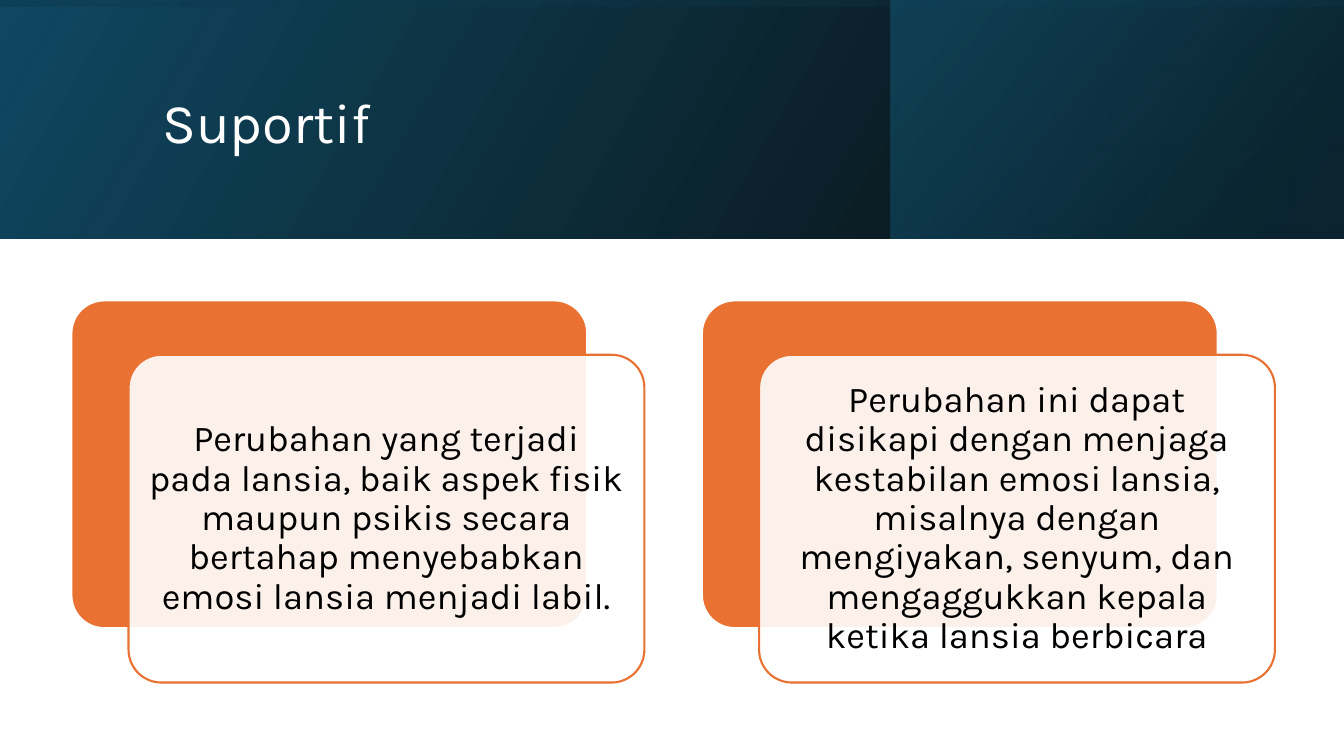
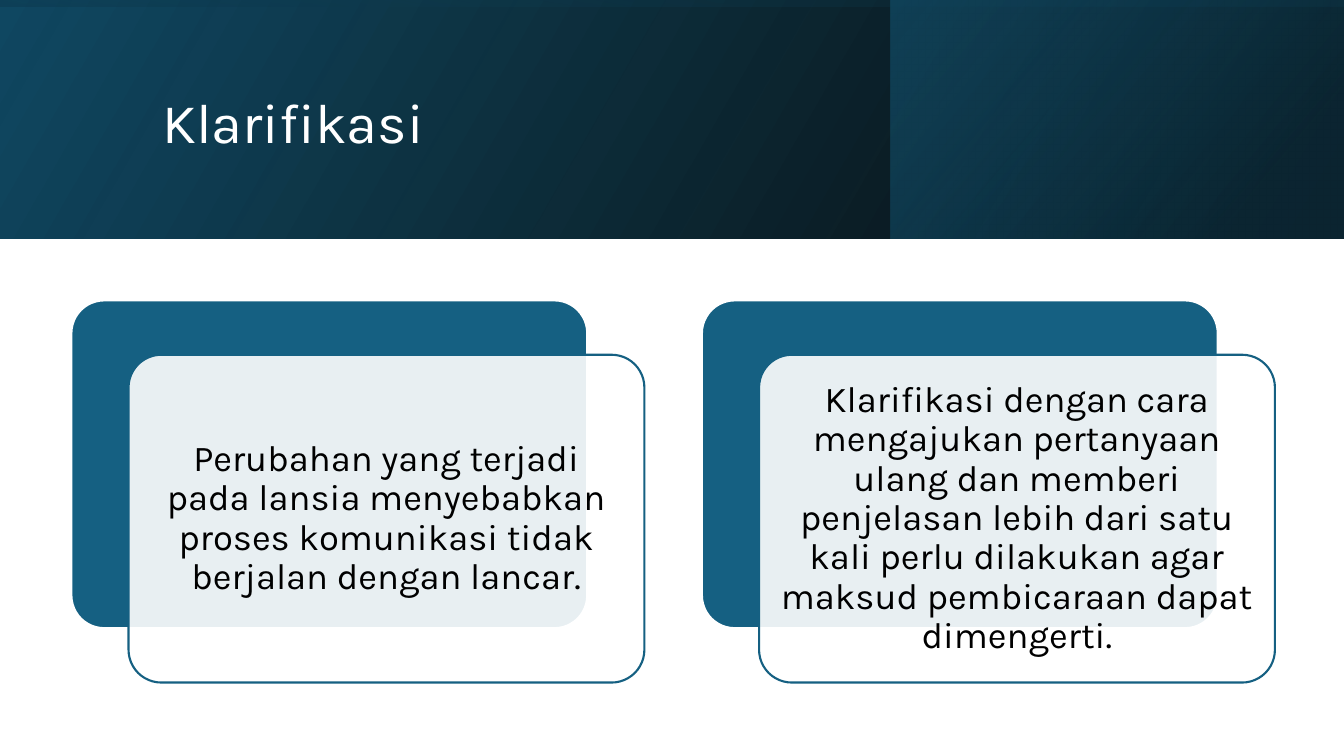
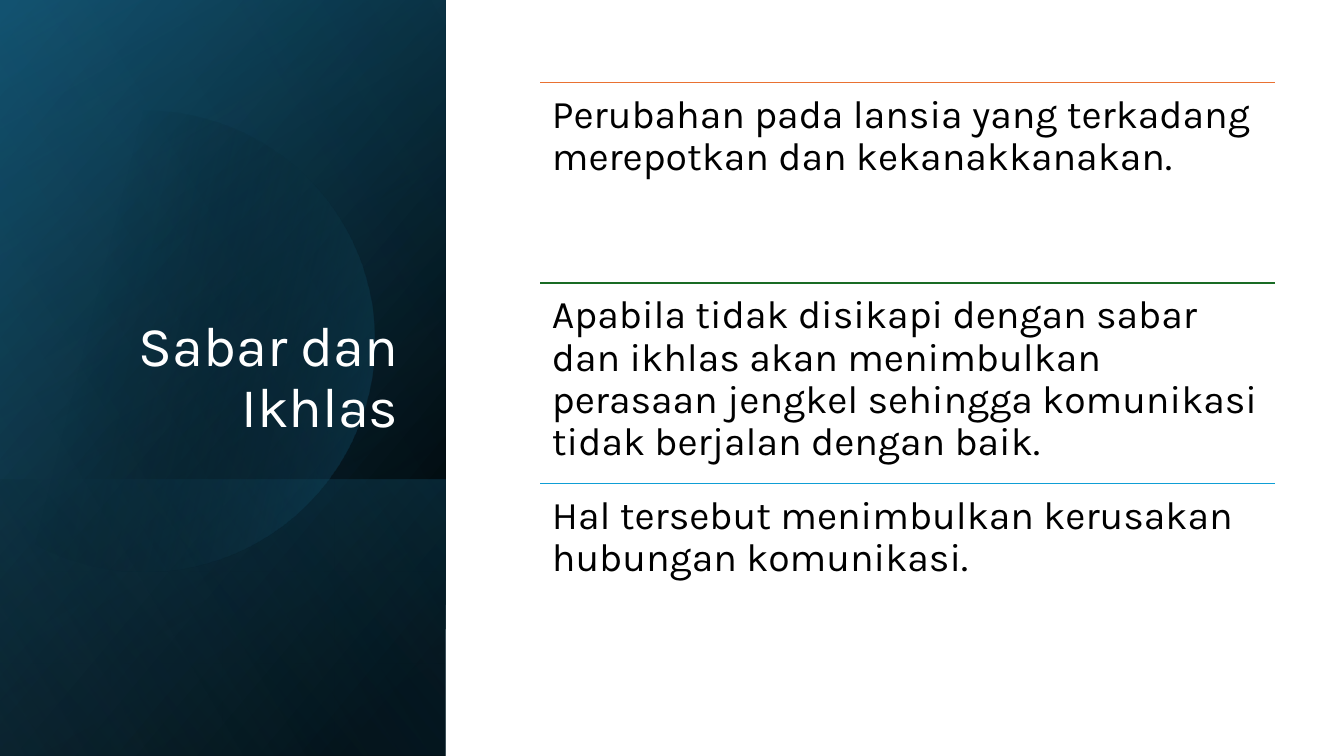
from dataclasses import dataclass
from math import acos, cos, sin

from lxml.etree import SubElement
from pptx import Presentation
from pptx.dml.color import RGBColor
from pptx.enum.shapes import MSO_CONNECTOR, MSO_SHAPE
from pptx.enum.text import MSO_ANCHOR, MSO_AUTO_SIZE, PP_ALIGN
from pptx.oxml.ns import qn
from pptx.util import Cm, Pt


@dataclass(frozen=True)
class Theme:
    font: str = "Karla"
    title_size: int = 40
    card_size: int = 26
    list_size: int = 28
    line_spacing: float = 0.9
    white: str = "FFFFFF"
    black: str = "000000"
    navy: str = "104862"
    deep_blue: str = "0B3041"
    blue: str = "156082"
    sky: str = "46B1E1"
    cyan: str = "0F9ED5"
    orange: str = "E97132"
    green: str = "196B24"


THEME = Theme()
SLIDE_WIDTH, SLIDE_HEIGHT = 33.87, 19.05
BAND_HEIGHT, PANEL_WIDTH = 6.02, 11.23
TITLE_ONLY = 5


# Fills and text
def set_opacity(shape, *percents):
    colors = shape.element.spPr.iter(qn("a:srgbClr"))
    for color, percent in zip(colors, percents):
        SubElement(color, qn("a:alpha")).set("val", str(percent * 1000))


def fill_gradient(shape, stops, angle):
    """Stops are (position, colour, opacity); the angle runs clockwise."""
    shape.shadow.inherit = False
    shape.line.fill.background()
    shape.fill.gradient()
    shape.fill.gradient_angle = 360 - angle
    for stop, (position, color, _) in zip(shape.fill.gradient_stops, stops):
        stop.position = position / 100
        stop.color.rgb = RGBColor.from_string(color)
    set_opacity(shape, *(opacity for _, _, opacity in stops))


def write(frame, text, size, color, align=PP_ALIGN.LEFT,
          anchor=MSO_ANCHOR.TOP, inset=0.25):
    frame.word_wrap = True
    frame.auto_size = MSO_AUTO_SIZE.NONE
    frame.vertical_anchor = anchor
    frame.margin_left = frame.margin_right = Cm(inset)
    frame.margin_top = frame.margin_bottom = Cm(min(inset, 0.3))
    para = frame.paragraphs[0]
    para.alignment = align
    para.line_spacing = THEME.line_spacing
    span = para.add_run()
    span.text = text
    span.font.name = THEME.font
    span.font.size = Pt(size)
    span.font.color.rgb = RGBColor.from_string(color)


# Backgrounds
def add_band(page, left, top, width, height, stops, angle, rotation=0):
    """Place a mirrored gradient by the area it covers after a quarter turn."""
    if rotation:
        left += (width - height) / 2
        top += (height - width) / 2
        width, height = height, width
    band = page.shapes.add_shape(
        MSO_SHAPE.RECTANGLE, Cm(left), Cm(top), Cm(width), Cm(height))
    band.rotation = rotation
    band.element.spPr.find(qn("a:xfrm")).set("flipH", "1")
    fill_gradient(band, stops, angle)


def add_header(page):
    right = 22.45
    add_band(page, 0, 0, SLIDE_WIDTH, BAND_HEIGHT,
             [(0, THEME.black, 96), (100, THEME.navy, 100)], 330)
    add_band(page, right, 0, SLIDE_WIDTH - right, BAND_HEIGHT,
             [(19, THEME.deep_blue, 68), (100, THEME.blue, 48)], 320)
    add_band(page, 0, 0, SLIDE_WIDTH, BAND_HEIGHT,
             [(23, THEME.navy, 16), (99, THEME.black, 45)], 350, 270)


def add_disc(page, center_x, center_y, radius):
    """Draw the part of a disc that lies right of the slide edge."""
    limit, steps = acos(-center_x / radius), 120
    angles = [limit * (2 * step / steps - 1) for step in range(steps + 1)]
    points = [(Cm(center_x + radius * cos(angle)),
               Cm(center_y + radius * sin(angle))) for angle in angles]
    outline = page.shapes.build_freeform(*points[0])
    outline.add_line_segments(points[1:], close=True)
    fill_gradient(outline.convert_to_shape(),
                  [(29, THEME.black, 0), (100, THEME.blue, 43)], 14)


def add_side_panel(page):
    foot = 12.09
    full = (0, 0, PANEL_WIDTH, SLIDE_HEIGHT)
    add_band(page, *full, [(8, THEME.black, 100), (100, THEME.navy, 100)], 50, 90)
    add_band(page, *full, [(0, THEME.black, 0), (99, THEME.blue, 46)], 30, 90)
    add_band(page, 0, foot, PANEL_WIDTH, SLIDE_HEIGHT - foot,
             [(2, THEME.blue, 29), (100, THEME.black, 30)], 130, 90)
    add_disc(page, 3.64, 8.6, 5.8)
    add_band(page, *full, [(0, THEME.black, 0), (99, THEME.sky, 11)], 120, 90)


# Content
def add_title(page, text, left, top, width, height, align, anchor):
    title = page.shapes.title
    page.shapes.element.append(title.element)  # in front of the background
    title.left, title.top = Cm(left), Cm(top)
    title.width, title.height = Cm(width), Cm(height)
    write(title.text_frame, text, THEME.title_size, THEME.white, align, anchor)


def add_card_layer(page, left, top, fill, line):
    card = page.shapes.add_shape(
        MSO_SHAPE.ROUNDED_RECTANGLE, Cm(left), Cm(top), Cm(13), Cm(8.26))
    card.adjustments[0] = 0.1
    card.shadow.inherit = False
    card.fill.solid()
    card.fill.fore_color.rgb = RGBColor.from_string(fill)
    card.line.color.rgb = RGBColor.from_string(line)
    card.line.width = Pt(1.5)
    return card


def add_card(page, left, top, text, accent):
    add_card_layer(page, left, top, accent, THEME.white)
    front = add_card_layer(page, left + 1.44, top + 1.37, THEME.white, accent)
    set_opacity(front, 90)
    write(front.text_frame, text, THEME.card_size, THEME.black,
          PP_ALIGN.CENTER, MSO_ANCHOR.MIDDLE, 0.28)


def add_ruled_text(page, left, top, width, height, text, accent):
    rule = page.shapes.add_connector(
        MSO_CONNECTOR.STRAIGHT, Cm(left), Cm(top), Cm(left + width), Cm(top))
    rule.line.color.rgb = RGBColor.from_string(accent)
    rule.line.width = Pt(1)
    SubElement(rule.element.spPr, qn("a:effectLst"))
    box = page.shapes.add_textbox(Cm(left), Cm(top), Cm(width), Cm(height))
    write(box.text_frame, text, THEME.list_size, THEME.black, inset=0.3)


# Slides
def add_page(deck):
    return deck.slides.add_slide(deck.slide_layouts[TITLE_ONLY])


def add_card_page(deck, title, accent, texts):
    page = add_page(deck)
    add_header(page)
    add_title(page, title, 3.84, 0.97, 27, 4.37,
              PP_ALIGN.LEFT, MSO_ANCHOR.MIDDLE)
    for index, text in enumerate(texts):
        add_card(page, 1.8 + index * 15.89, 7.57, text, accent)


def add_list_page(deck, title, items):
    page = add_page(deck)
    add_side_panel(page)
    add_title(page, title, 1.63, 4.67, 8.66, 6.65,
              PP_ALIGN.RIGHT, MSO_ANCHOR.BOTTOM)
    row_height = 5.05
    for index, (text, accent) in enumerate(items):
        add_ruled_text(page, 13.61, 2.08 + index * row_height,
                       18.53, row_height, text, accent)


def main():
    deck = Presentation()
    deck.slide_width, deck.slide_height = Cm(SLIDE_WIDTH), Cm(SLIDE_HEIGHT)
    add_card_page(deck, "Suportif", THEME.orange, [
        "Perubahan yang terjadi pada lansia, baik aspek fisik maupun psikis "
        "secara bertahap menyebabkan emosi lansia menjadi labil.",
        "Perubahan ini dapat disikapi dengan menjaga kestabilan emosi lansia, "
        "misalnya dengan mengiyakan, senyum, dan mengaggukkan kepala ketika "
        "lansia berbicara",
    ])
    add_card_page(deck, "Klarifikasi", THEME.blue, [
        "Perubahan yang terjadi pada lansia menyebabkan proses komunikasi "
        "tidak berjalan dengan lancar.",
        "Klarifikasi dengan cara mengajukan pertanyaan ulang dan memberi "
        "penjelasan lebih dari satu kali perlu dilakukan agar maksud "
        "pembicaraan dapat dimengerti.",
    ])
    add_list_page(deck, "Sabar dan Ikhlas", [
        ("Perubahan pada lansia yang terkadang merepotkan dan "
         "kekanakkanakan.", THEME.orange),
        ("Apabila tidak disikapi dengan sabar dan ikhlas akan menimbulkan "
         "perasaan jengkel sehingga komunikasi tidak berjalan dengan baik.",
         THEME.green),
        ("Hal tersebut menimbulkan kerusakan hubungan komunikasi.",
         THEME.cyan),
    ])
    deck.save("out.pptx")


if __name__ == "__main__":
    main()
